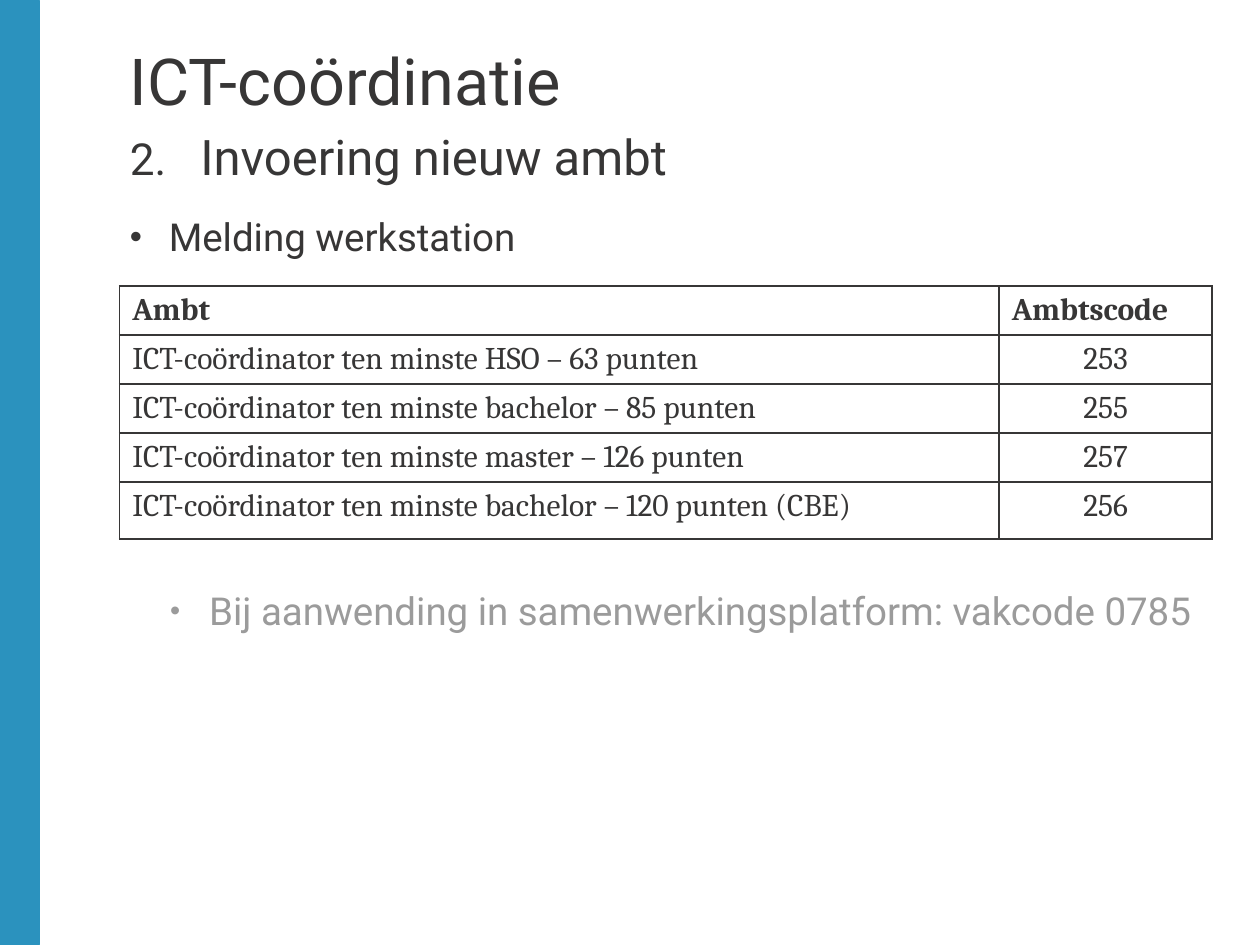
from lxml import etree
from pptx import Presentation
from pptx.dml.color import RGBColor
from pptx.enum.shapes import MSO_SHAPE
from pptx.enum.text import MSO_ANCHOR, MSO_AUTO_SIZE, PP_ALIGN
from pptx.oxml.ns import qn
from pptx.util import Inches, Pt

BLUE = RGBColor(0x2B, 0x92, 0xBE)
DARK = RGBColor(0x37, 0x36, 0x36)
GREY = RGBColor(0x9B, 0x9B, 0x9B)
BODY_FONT = "Roboto"
TABLE_FONT = "Cambria"

ROWS = [
    ("Ambt", "Ambtscode"),
    ("ICT-coördinator ten minste HSO – 63 punten", "253"),
    ("ICT-coördinator ten minste bachelor – 85 punten", "255"),
    ("ICT-coördinator ten minste master – 126 punten", "257"),
    ("ICT-coördinator ten minste bachelor – 120 punten (CBE)", "256"),
]
COLUMN_WIDTHS = (6.98, 1.69)
ROW_HEIGHTS = (0.38, 0.38, 0.38, 0.38, 0.45)


def place(sp, left, top, width, height):
    sp.left, sp.top = Inches(left), Inches(top)
    sp.width, sp.height = Inches(width), Inches(height)


def prepare_frame(tf):
    tf.margin_left = tf.margin_top = tf.margin_right = tf.margin_bottom = 0
    tf.vertical_anchor = MSO_ANCHOR.TOP
    tf.auto_size = MSO_AUTO_SIZE.NONE
    tf.word_wrap = True


def format_runs(p, font, size, color, bold=False):
    for r in p.runs:
        r.font.name, r.font.size, r.font.bold = font, Pt(size), bold
        r.font.color.rgb = color


def add_side_bar(slide):
    sp = slide.shapes.add_shape(MSO_SHAPE.RECTANGLE, 0, 0, Inches(0.31), Inches(7.5))
    sp.shadow.inherit = False
    sp.fill.solid()
    sp.fill.fore_color.rgb = BLUE
    sp.line.color.rgb = BLUE
    sp.line.width = Pt(0.5)


def fill_title(sp, text):
    place(sp, 1.03, 0.41, 8.52, 0.65)
    prepare_frame(sp.text_frame)
    p = sp.text_frame.paragraphs[0]
    p.text = text
    p.alignment = PP_ALIGN.LEFT
    p.line_spacing = Pt(38)
    format_runs(p, BODY_FONT, 37, DARK)


def set_bullet(p, left, hanging, percent, start=None):
    """Give a hanging bullet, or a number when start is given."""
    pPr = p._p.get_or_add_pPr()
    pPr.set("marL", str(Inches(left)))
    pPr.set("indent", str(-Inches(hanging)))
    etree.SubElement(pPr, qn("a:buSzPct"), val=str(percent * 1000))
    font = "Arial" if start is None else BODY_FONT
    etree.SubElement(pPr, qn("a:buFont"), typeface=font)
    if start is None:
        etree.SubElement(pPr, qn("a:buChar"), char="•")
    else:
        etree.SubElement(pPr, qn("a:buAutoNum"), type="arabicPeriod", startAt=str(start))


def format_item(p, text, size, color, space_before):
    p.text = text
    p.line_spacing = 0.9
    p.space_before = Pt(space_before)
    format_runs(p, BODY_FONT, size, color)


def fill_body(sp):
    place(sp, 1.03, 1.06, 8.67, 6.03)
    tf = sp.text_frame
    prepare_frame(tf)
    heading, item, note = tf.paragraphs[0], tf.add_paragraph(), tf.add_paragraph()
    note.level = 1
    set_bullet(heading, 0.56, 0.56, 90, start=2)
    set_bullet(item, 0.31, 0.31, 90)
    set_bullet(note, 0.63, 0.31, 75)
    format_item(heading, "Invoering nieuw ambt", 28, DARK, 0)
    format_item(item, "Melding werkstation", 22, DARK, 18)
    # The wide gap leaves room for the table
    format_item(note, "Bij aanwending in samenwerkingsplatform: vakcode 0785", 22, GREY, 190)


def set_borders(cell, color, width):
    tcPr = cell._tc.get_or_add_tcPr()
    for side in ("a:lnL", "a:lnR", "a:lnT", "a:lnB"):
        ln = etree.SubElement(tcPr, qn(side), w=str(Pt(width)))
        fill = etree.SubElement(ln, qn("a:solidFill"))
        etree.SubElement(fill, qn("a:srgbClr"), val=str(color))


def add_code_table(slide):
    frame = slide.shapes.add_table(
        len(ROWS), len(COLUMN_WIDTHS), Inches(0.95), Inches(2.27),
        Inches(sum(COLUMN_WIDTHS)), Inches(sum(ROW_HEIGHTS)))
    table = frame.table
    table.first_row = table.horz_banding = False
    for column, width in zip(table.columns, COLUMN_WIDTHS):
        column.width = Inches(width)
    for i, (row, height) in enumerate(zip(table.rows, ROW_HEIGHTS)):
        row.height = Inches(height)
        for j, text in enumerate(ROWS[i]):
            cell = table.cell(i, j)
            set_borders(cell, DARK, 1)
            cell.fill.background()
            p = cell.text_frame.paragraphs[0]
            p.text = text
            p.alignment = PP_ALIGN.CENTER if i and j else PP_ALIGN.LEFT
            format_runs(p, TABLE_FONT, 18, DARK, bold=i == 0)


def main():
    prs = Presentation()
    prs.slide_width, prs.slide_height = Inches(10), Inches(7.5)
    slide = prs.slides.add_slide(prs.slide_layouts[1])
    add_side_bar(slide)
    fill_body(slide.placeholders[1])
    fill_title(slide.shapes.title, "ICT-coördinatie")
    add_code_table(slide)
    prs.save("out.pptx")


if __name__ == "__main__":
    main()
